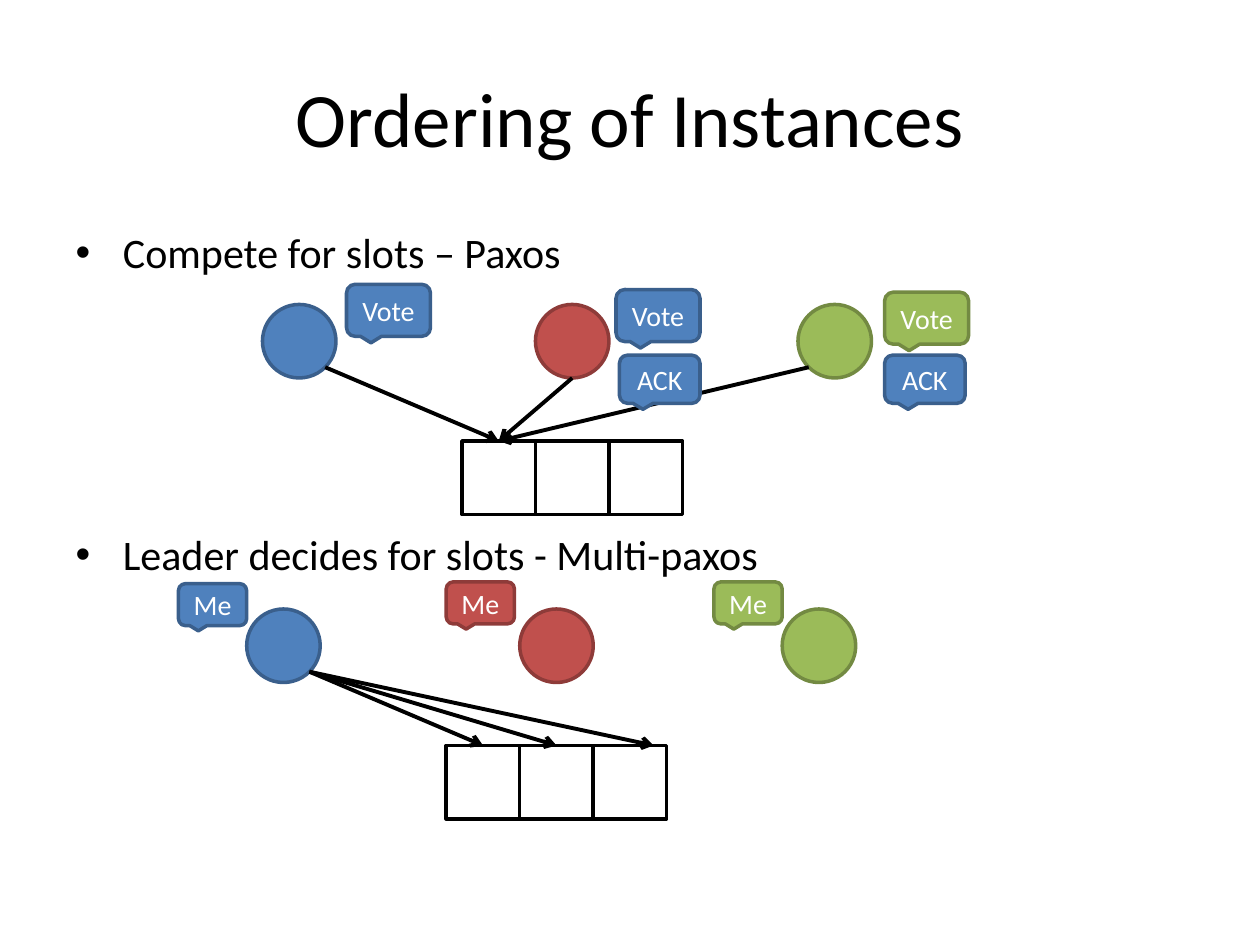
from math import sqrt

from lxml import etree
from pptx import Presentation
from pptx.dml.color import RGBColor
from pptx.enum import shapes, text
from pptx.oxml.ns import qn
from pptx.util import Pt

THEME = {
    "font": "Calibri",
    "sizes": {"title": 44, "body": 24, "callout": 16},
    "black": "000000",
    "white": "FFFFFF",
    "pairs": {  # fill, outline
        "blue": ("4F81BD", "3A5F8C"),
        "red": ("C0504D", "8E3B39"),
        "green": ("9BBB59", "738A42"),
        "slot": ("FFFFFF", "000000"),
    },
    "outline": 2,
    "arrow": 2.25,
}

TITLE = "Ordering of Instances"
BULLETS = ["Compete for slots – Paxos", "Leader decides for slots - Multi-paxos"]
BULLET_GAP = 143.8

# Node and slot positions are relative to each scheme's origin.
SIZE = 42
NODES = [("blue", 0), ("red", 156), ("green", 306)]
SLOTS_LEFT, SLOTS_TOP, SLOT_COUNT = 114, 78, 3
CALLOUT_SIZES = {"Vote": (48, 29.7), "ACK": (46, 27.5), "Me": (39, 24)}

# Arrows: node index, side of the node, slot index, shift along the slot.
# Callouts: wording, colour, left, top on the slide.
SCHEMES = [
    {
        "origin": (150, 174),
        "arrows": [(0, "right", 0, 0), (2, "left", 0, 0), (1, "bottom", 0, 0)],
        "callouts": [
            ("Vote", "blue", 198, 162.5),
            ("Vote", "blue", 352, 165.5),
            ("Vote", "green", 505.5, 167),
            ("ACK", "blue", 354, 203),
            ("ACK", "blue", 505.5, 203),
        ],
    },
    {
        "origin": (141, 348),
        "arrows": [(0, "right", 0, 0), (0, "right", 1, 0), (0, "right", 2, 13.5)],
        "callouts": [
            ("Me", "red", 255, 332.5),
            ("Me", "green", 408, 332.5),
            ("Me", "blue", 102, 333.5),
        ],
    },
]

RADIUS = SIZE / 2
DIAGONAL = RADIUS / sqrt(2)
SIDES = {"left": (-DIAGONAL, DIAGONAL), "right": (DIAGONAL, DIAGONAL), "bottom": (0, RADIUS)}


def color(value):
    return RGBColor.from_string(value)


def add_run(paragraph, wording, role, ink):
    run = paragraph.add_run()
    run.text = wording
    run.font.name = THEME["font"]
    run.font.size = Pt(THEME["sizes"][role])
    run.font.color.rgb = color(ink)


def place(shape, left, top, width, height):
    shape.left, shape.top = Pt(left), Pt(top)
    shape.width, shape.height = Pt(width), Pt(height)


def add_shape(slide, kind, pair, left, top, width, height):
    shape = slide.shapes.add_shape(kind, Pt(left), Pt(top), Pt(width), Pt(height))
    fill, outline = THEME["pairs"][pair]
    shape.shadow.inherit = False
    shape.fill.solid()
    shape.fill.fore_color.rgb = color(fill)
    shape.line.color.rgb = color(outline)
    shape.line.width = Pt(THEME["outline"])
    return shape


def add_arrow(slide, start, end):
    points = [Pt(value) for value in (*start, *end)]
    arrow = slide.shapes.add_connector(shapes.MSO_CONNECTOR.STRAIGHT, *points)
    arrow.line.color.rgb = color(THEME["black"])
    arrow.line.width = Pt(THEME["arrow"])
    etree.SubElement(arrow.line._get_or_add_ln(), qn("a:tailEnd"), type="arrow")
    etree.SubElement(arrow._element.spPr, qn("a:effectLst"))


def add_callout(slide, wording, pair, left, top):
    kind = shapes.MSO_SHAPE.ROUNDED_RECTANGULAR_CALLOUT
    frame = add_shape(slide, kind, pair, left, top, *CALLOUT_SIZES[wording]).text_frame
    frame.margin_left = frame.margin_right = frame.margin_top = frame.margin_bottom = 0
    frame.vertical_anchor = text.MSO_ANCHOR.MIDDLE
    paragraph = frame.paragraphs[0]
    paragraph.alignment = text.PP_ALIGN.CENTER
    add_run(paragraph, wording, "callout", THEME["white"])


def add_scheme(slide, scheme):
    """Draw three nodes, their slots, the arrows between them and the callouts."""
    left, top = scheme["origin"]
    slots_top = top + SLOTS_TOP
    for pair, offset in NODES:
        add_shape(slide, shapes.MSO_SHAPE.OVAL, pair, left + offset, top, SIZE, SIZE)
    for index in range(SLOT_COUNT):
        slot_left = left + SLOTS_LEFT + index * SIZE
        add_shape(slide, shapes.MSO_SHAPE.RECTANGLE, "slot", slot_left, slots_top, SIZE, SIZE)
    for node, side, slot, shift in scheme["arrows"]:
        across, down = SIDES[side]
        start = (left + NODES[node][1] + RADIUS + across, top + RADIUS + down)
        end = (left + SLOTS_LEFT + slot * SIZE + RADIUS + shift, slots_top)
        add_arrow(slide, start, end)
    for callout in scheme["callouts"]:
        add_callout(slide, *callout)


def add_text(slide):
    title, body = slide.placeholders
    place(title, 36, 21.6, 648, 90)
    title.text_frame.vertical_anchor = text.MSO_ANCHOR.MIDDLE
    heading = title.text_frame.paragraphs[0]
    heading.alignment = text.PP_ALIGN.CENTER
    add_run(heading, TITLE, "title", THEME["black"])

    place(body, 36, 126, 648, 356.4)
    frame = body.text_frame
    frame.auto_size = text.MSO_AUTO_SIZE.NONE
    for index, wording in enumerate(BULLETS):
        paragraph = frame.add_paragraph() if index else frame.paragraphs[0]
        paragraph.space_before = Pt(BULLET_GAP if index else 0)
        add_run(paragraph, wording, "body", THEME["black"])


def main():
    presentation = Presentation()
    presentation.slide_width, presentation.slide_height = Pt(720), Pt(540)
    slide = presentation.slides.add_slide(presentation.slide_layouts[1])
    add_text(slide)
    for scheme in SCHEMES:
        add_scheme(slide, scheme)
    presentation.save("out.pptx")


if __name__ == "__main__":
    main()
